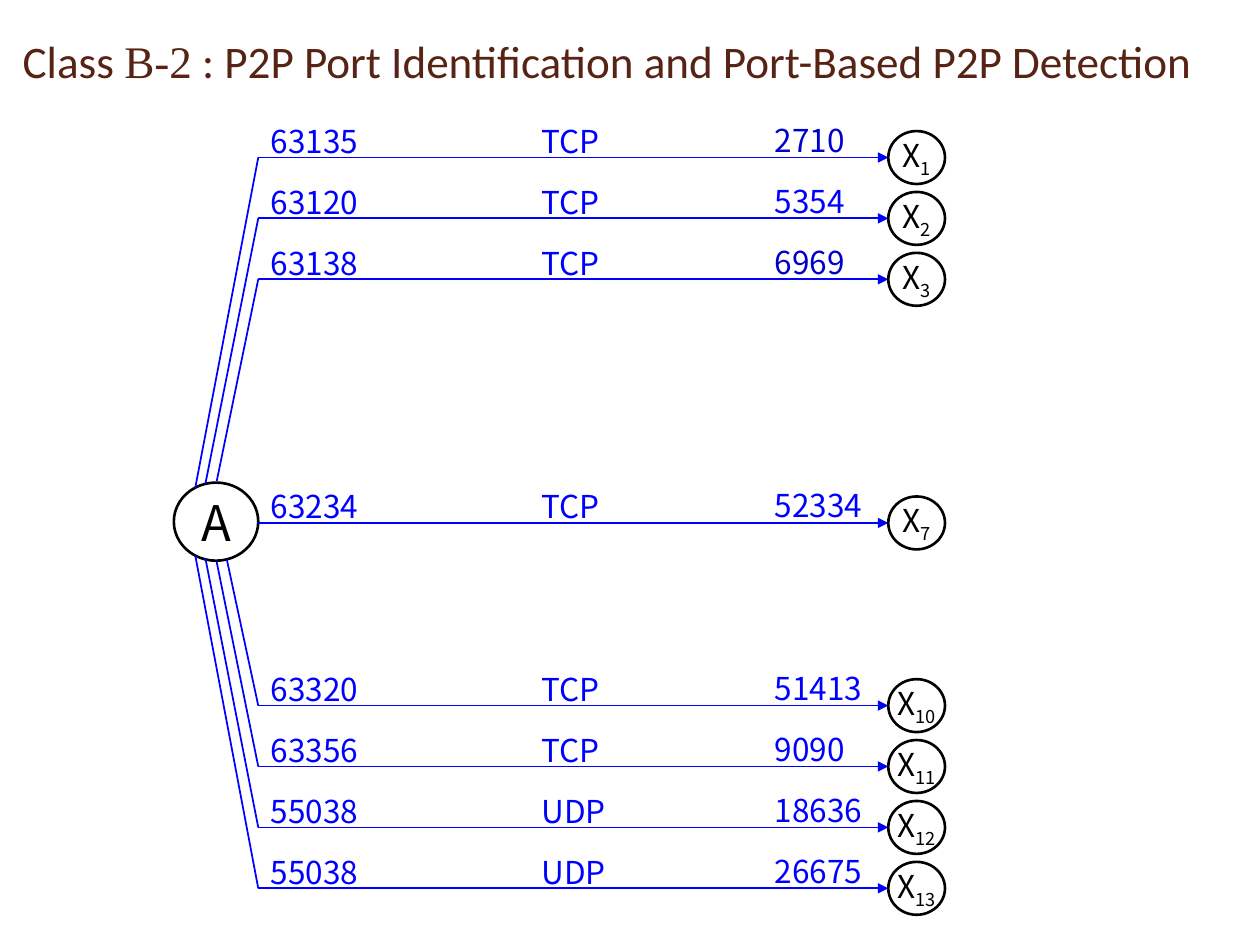
from pptx import Presentation
from pptx.dml.color import RGBColor
from pptx.enum.shapes import MSO_CONNECTOR, MSO_SHAPE
from pptx.enum.text import MSO_ANCHOR, MSO_AUTO_SIZE, PP_ALIGN
from pptx.oxml.ns import qn
from pptx.util import Inches, Pt
from lxml.etree import SubElement

TITLE = [
    ("Class ", "Calibri"),
    ("B-2", "Times New Roman"),
    (" : P2P Port Identification and Port-Based P2P Detection", "Calibri"),
]
# peer number, source port, protocol, target port, port colour, branch start on hub
FLOWS = [
    (1, "63135", "TCP", "2710", "navy", (1.55, 3.87)),
    (2, "63120", "TCP", "5354", "blue", (1.63, 3.84)),
    (3, "63138", "TCP", "6969", "navy", (1.72, 3.82)),
    (7, "63234", "TCP", "52334", "blue", None),
    (10, "63320", "TCP", "51413", "blue", (1.8, 4.44)),
    (11, "63356", "TCP", "9090", "blue", (1.72, 4.46)),
    (12, "55038", "UDP", "18636", "blue", (1.63, 4.43)),
    (13, "55038", "UDP", "26675", "blue", (1.55, 4.41)),
]
THEME = {
    "brown": RGBColor(0x57, 0x23, 0x14),
    "blue": RGBColor(0, 0, 0xFF),
    "navy": RGBColor(0, 0, 0xCC),
    "black": RGBColor(0, 0, 0),
    "white": RGBColor(0xFF, 0xFF, 0xFF),
    "font": "Noto Sans CJK KR",
    "title": 25.8,
    "hub": 28,
    "label": 18,
}
TOP, BOTTOM, LAST = 1.25, 7.05, 13
STEP = (BOTTOM - TOP) / (LAST - 1)
LEFT, RIGHT = 2.05, 7.05


def add_run(para, text, size, color, font=THEME["font"], base=None):
    run = para.add_run()
    run.text = text
    run.font.name = font
    run.font.size = Pt(THEME[size])
    run.font.color.rgb = THEME[color]
    if base:
        run._r.get_or_add_rPr().set("baseline", str(base * 1000))


def add_node(slide, box, text, size, sub="", alpha=None):
    node = slide.shapes.add_shape(MSO_SHAPE.OVAL, *map(Inches, box))
    node.shadow.inherit = False
    node.fill.solid()
    node.fill.fore_color.rgb = THEME["white"]
    if alpha:
        tint = node._element.spPr.find(qn("a:solidFill"))[0]
        SubElement(tint, qn("a:alpha")).set("val", str(alpha * 1000))
    node.line.color.rgb = THEME["black"]
    node.line.width = Pt(1.5)
    frame = node.text_frame
    frame.word_wrap = False
    frame.vertical_anchor = MSO_ANCHOR.MIDDLE
    para = frame.paragraphs[0]
    para.alignment = PP_ALIGN.CENTER
    add_run(para, text, size, "black")
    if sub:
        add_run(para, sub, size, "black", base=-25)


def add_wire(slide, start, end, arrow=False):
    wire = slide.shapes.add_connector(MSO_CONNECTOR.STRAIGHT, *map(Inches, (*start, *end)))
    wire.line.color.rgb = THEME["blue"]
    wire.line.width = Pt(1)
    if arrow:
        SubElement(wire.line._get_or_add_ln(), qn("a:tailEnd")).set("type", "triangle")
    SubElement(wire._element.spPr, qn("a:effectLst"))


def add_label(slide, left, top, width, text, color):
    box = slide.shapes.add_textbox(*map(Inches, (left, top, width, 0.37)))
    frame = box.text_frame
    frame.word_wrap = True
    frame.auto_size = MSO_AUTO_SIZE.SHAPE_TO_FIT_TEXT
    add_run(frame.paragraphs[0], text, "label", color)


def add_title(slide):
    title = slide.shapes.title
    title.left, title.top, title.width, title.height = map(Inches, (0.08, 0.13, 9.75, 0.7))
    frame = title.text_frame
    frame.word_wrap = True
    frame.auto_size = MSO_AUTO_SIZE.NONE
    frame.vertical_anchor = MSO_ANCHOR.MIDDLE
    para = frame.paragraphs[0]
    para.alignment = PP_ALIGN.LEFT
    for text, font in TITLE:
        add_run(para, text, "title", "brown", font)


def main():
    deck = Presentation()
    deck.slide_width, deck.slide_height = Inches(10), Inches(7.5)
    slide = deck.slides.add_slide(deck.slide_layouts[5])
    add_title(slide)
    add_node(slide, (1.38, 3.83, 0.67, 0.62), "A", "hub")
    for peer, source, proto, target, color, start in FLOWS:
        y = TOP + (peer - 1) * STEP
        if start:
            add_wire(slide, start, (LEFT, y))
        add_wire(slide, (LEFT, y), (RIGHT, y), arrow=True)
        add_node(slide, (RIGHT, y - 0.21, 0.45, 0.42), "X", "label", str(peer), alpha=40)
        add_label(slide, LEFT, y - 0.33, 1.08, source, "blue")
        add_label(slide, 4.2, y - 0.33, 0.75, proto, "blue")
        add_label(slide, 6.05, y - 0.34, 0.99, target, color)
    deck.save("out.pptx")


if __name__ == "__main__":
    main()
